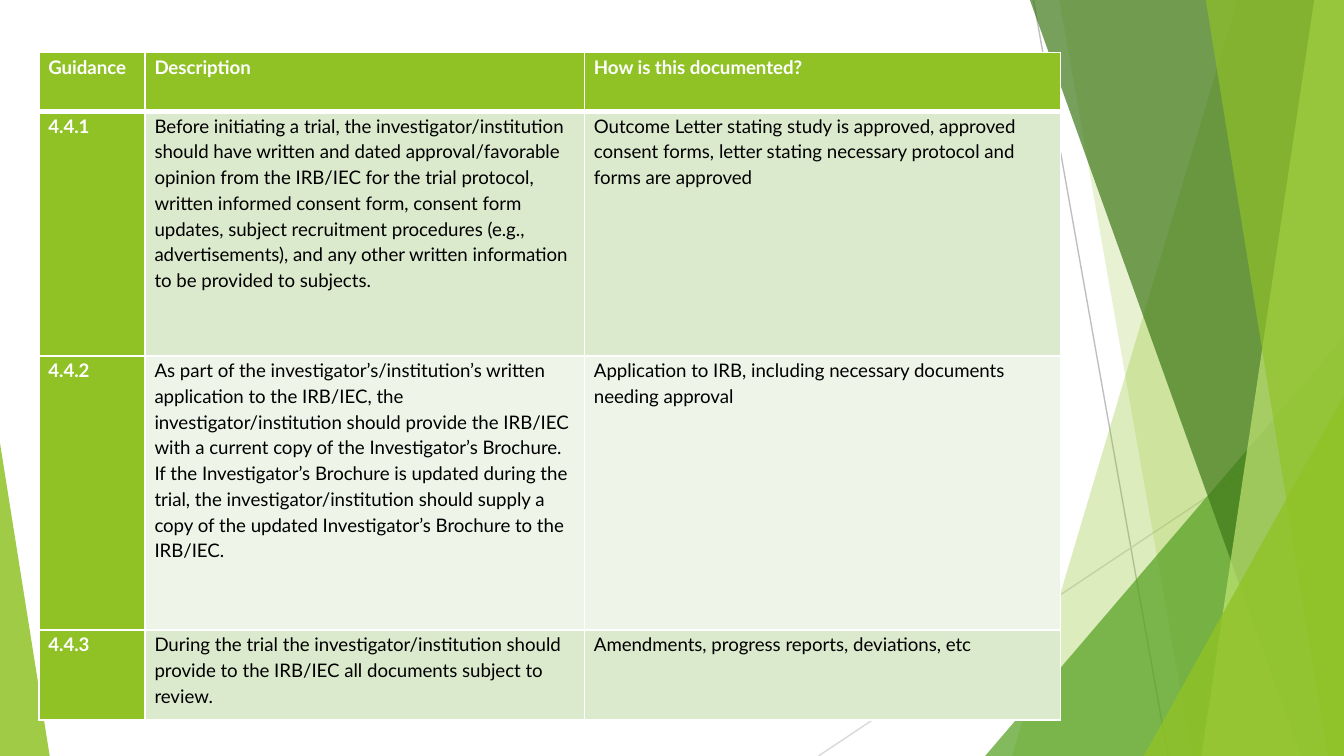
from lxml import etree
from pptx import Presentation
from pptx.dml.color import RGBColor
from pptx.enum.shapes import MSO_CONNECTOR, MSO_SHAPE
from pptx.oxml.ns import qn
from pptx.util import Inches, Pt

STRAIGHT = MSO_CONNECTOR.STRAIGHT
TRIANGLE = MSO_SHAPE.ISOSCELES_TRIANGLE
PAGE_WIDTH = 10
PAGE_HEIGHT = PAGE_WIDTH * 9 / 16
BLANK_LAYOUT = 6

COLORS = {
    "lime": "90C226",
    "pale_lime": "C0E474",
    "green": "54A021",
    "dark_green": "3F7819",
    "gray": "BFBFBF",
    "light_gray": "D9D9D9",
    "odd_row": "DBE9CD",
    "even_row": "EEF4E8",
    "white": "FFFFFF",
    "black": "000000",
}

HEADERS = ["Guidance", "Description", "How is this documented?"]
GUIDANCE = [
    ["4.4.1",
     "Before initiating a trial, the investigator/institution should have written and dated "
     "approval/favorable opinion from the IRB/IEC for the trial protocol, written informed "
     "consent form, consent form updates, subject recruitment procedures (e.g., "
     "advertisements), and any other written information to be provided to subjects.",
     "Outcome Letter stating study is approved, approved consent forms, letter stating "
     "necessary protocol and forms are approved"],
    ["4.4.2",
     "As part of the investigator’s/institution’s written application to the IRB/IEC, the "
     "investigator/institution should provide the IRB/IEC with a current copy of the "
     "Investigator’s Brochure. If the Investigator’s Brochure is updated during the trial, "
     "the investigator/institution should supply a copy of the updated Investigator’s "
     "Brochure to the IRB/IEC.",
     "Application to IRB, including necessary documents needing approval"],
    ["4.4.3",
     "During the trial the investigator/institution should provide to the IRB/IEC all "
     "documents subject to review.",
     "Amendments, progress reports, deviations, etc"],
]


def rgb(name):
    return RGBColor.from_string(COLORS[name])


def paint(shape, color, opacity):
    shape.shadow.inherit = False
    shape.line.fill.background()
    shape.fill.solid()
    shape.fill.fore_color.rgb = rgb(color)
    tint = shape._element.spPr.find(qn("a:solidFill"))[0]
    etree.SubElement(tint, qn("a:alpha")).set("val", str(opacity * 1000))


def add_line(slide, start, end, color):
    line = slide.shapes.add_connector(STRAIGHT, *map(Inches, start + end))
    line.line.color.rgb = rgb(color)
    line.line.width = Pt(0.75)
    etree.SubElement(line._element.spPr, qn("a:effectLst"))


def add_shard(slide, points, color, opacity):
    corners = [(Inches(x), Inches(y)) for x, y in points]
    builder = slide.shapes.build_freeform(*corners[0])
    builder.add_line_segments(corners[1:], close=True)
    paint(builder.convert_to_shape(), color, opacity)


def add_corner(slide, box, apex, color, opacity):
    corner = slide.shapes.add_shape(TRIANGLE, *map(Inches, box))
    corner.adjustments[0] = apex
    paint(corner, color, opacity)


def add_backdrop(slide, left, top, width, height):
    right, bottom = left + width, top + height

    def shard(top_x, bottom_x, color, opacity):
        points = [(left + top_x, top - 0.01), (right, top - 0.01),
                  (right, bottom), (left + bottom_x, bottom)]
        add_shard(slide, points, color, opacity)

    def right_corner(base, rise, color, opacity):
        box = (right - base, bottom - rise, base, rise)
        add_corner(slide, box, 1, color, opacity)

    add_line(slide, (left + 7.69, top), (left + 8.69, bottom), "gray")
    add_line(slide, (right, top + 3.02), (left + 6.09, bottom), "light_gray")
    shard(9.21, 7.53, "lime", 30)
    shard(7.88, 8.87, "lime", 20)
    right_corner(2.67, 3.12, "green", 72)
    shard(7.66, 9.68, "dark_green", 70)
    shard(9.78, 8.94, "pale_lime", 70)
    shard(8.97, 9.88, "lime", 65)
    right_corner(1.49, 2.68, "lime", 80)
    add_corner(slide, (left, bottom - 2.33, 0.37, 2.33), 0, "lime", 85)


def write_text(cell, text, size=10, font="Lato", color="black", bold=False, spacing=1.15):
    para = cell.text_frame.paragraphs[0]
    para.line_spacing = spacing
    span = para.add_run()
    span.text = text
    span.font.size = Pt(size)
    span.font.name = font
    span.font.bold = bold
    span.font.color.rgb = rgb(color)


def add_borders(cell, widths):
    properties = cell._tc.get_or_add_tcPr()
    for index, (side, width) in enumerate(widths.items()):
        border = etree.Element(qn(f"a:{side}"), w=str(Pt(width)))
        fill = etree.SubElement(border, qn("a:solidFill"))
        etree.SubElement(fill, qn("a:srgbClr")).set("val", COLORS["white"])
        properties.insert(index, border)


def add_guidance_table(slide, left, top, width, height):
    rows = [HEADERS] + GUIDANCE
    frame = slide.shapes.add_table(
        len(rows), len(HEADERS), *map(Inches, (left, top, width, height)))
    table = frame.table
    for column, share in zip(table.columns, (0.79, 3.27, 3.54)):
        column.width = Inches(share)
    for row, share in zip(table.rows, (0.44, 1.82, 2.04, 0.67)):
        row.height = Inches(share)
    for row_index, texts in enumerate(rows):
        band = "odd_row" if row_index % 2 else "even_row"
        for column_index, text in enumerate(texts):
            cell = table.cell(row_index, column_index)
            heading = row_index == 0 or column_index == 0
            cell.margin_left = cell.margin_right = Inches(0.07)
            cell.margin_top = cell.margin_bottom = 0
            cell.fill.solid()
            cell.fill.fore_color.rgb = rgb("lime" if heading else band)
            write_text(cell, text, color="white" if heading else "black", bold=heading)
            add_borders(cell, {
                "lnL": 1, "lnR": 1,
                "lnT": 3 if row_index == 1 else 1,
                "lnB": 3 if row_index == 0 else 1,
            })


def main():
    deck = Presentation()
    deck.slide_width = Inches(PAGE_WIDTH)
    deck.slide_height = Inches(PAGE_HEIGHT)
    page = deck.slides.add_slide(deck.slide_layouts[BLANK_LAYOUT])
    add_backdrop(page, 0, 0, PAGE_WIDTH, PAGE_HEIGHT)
    add_guidance_table(page, 0.29, 0.39, 7.6, 4.97)
    deck.save("out.pptx")


if __name__ == "__main__":
    main()
